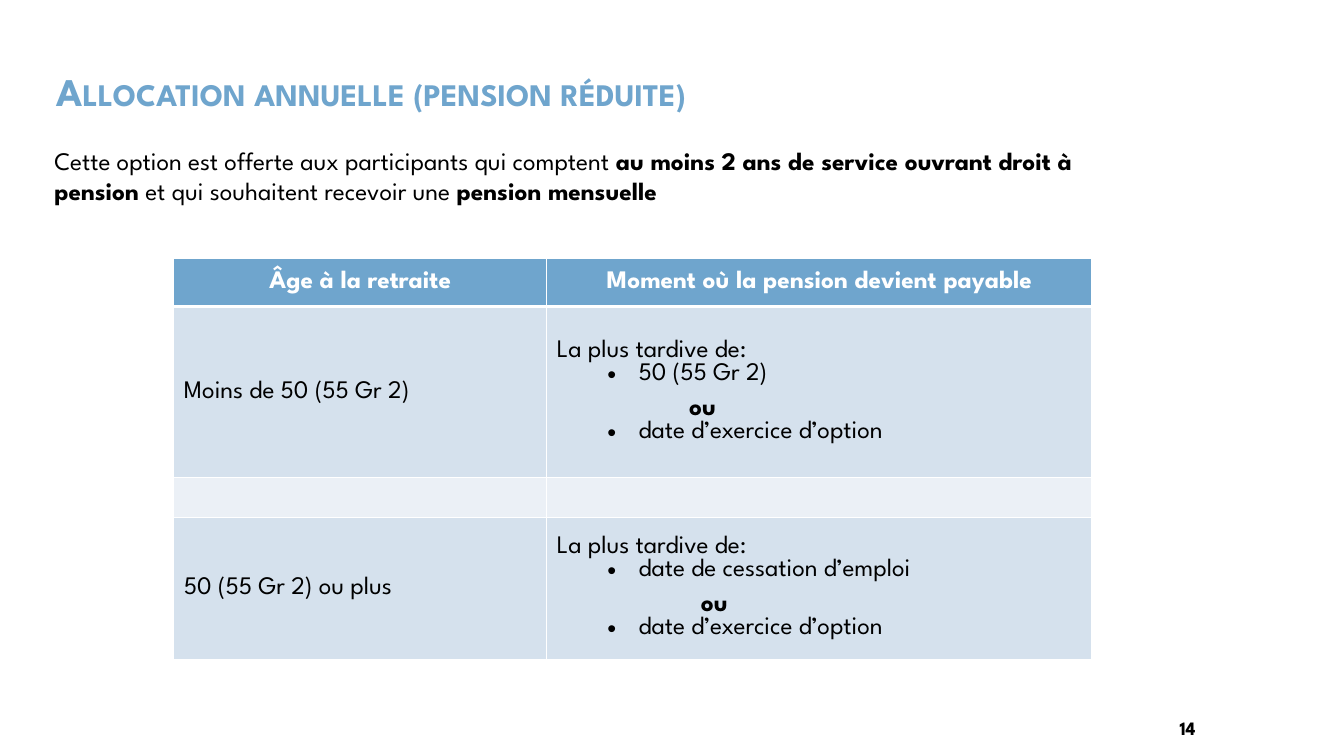
from lxml.etree import SubElement
from pptx import Presentation
from pptx.dml.color import RGBColor
from pptx.enum.text import MSO_ANCHOR, PP_ALIGN
from pptx.oxml.ns import qn
from pptx.util import Cm, Pt

BLUE = RGBColor(0x6F, 0xA5, 0xCD)
PALE_BLUE = RGBColor(0xD5, 0xE1, 0xED)
PALEST_BLUE = RGBColor(0xEB, 0xF0, 0xF6)
WHITE = RGBColor(0xFF, 0xFF, 0xFF)
BLACK = RGBColor(0, 0, 0)

COLUMN_WIDTHS = (9.4, 13.74)
ROW_HEIGHTS = (1.22, 4.32, 0.99, 3.58)
BULLET_INDENT = (2.06, -0.79)


class SlideBuilder:
    font_name = "League Spartan"

    def __init__(self, slide):
        self.slide = slide

    def style(self, paragraph, size=18, color=BLACK, bold=None):
        paragraph.font.name = self.font_name
        paragraph.font.size = Pt(size)
        paragraph.font.color.rgb = color
        paragraph.font.bold = bold

    def text(self, left, top, width, height, runs,
             align=PP_ALIGN.LEFT, **style):
        """Add a one-paragraph text box; runs are (text, bold) pairs."""
        box = self.slide.shapes.add_textbox(Cm(left), Cm(top), Cm(width), Cm(height))
        frame = box.text_frame
        frame.word_wrap = True
        paragraph = frame.paragraphs[0]
        paragraph.alignment = align
        self.style(paragraph, **style)
        for text, bold in runs:
            run = paragraph.add_run()
            run.text = text
            run.font.bold = bold
        return box

    def title(self, left, top, width, height, text):
        box = self.text(left, top, width, height, [(text, True)],
                        size=28, color=BLUE, bold=True)
        box.fill.solid()
        box.fill.fore_color.rgb = WHITE
        box.text_frame.vertical_anchor = MSO_ANCHOR.MIDDLE
        paragraph = box.text_frame.paragraphs[0]
        paragraph.line_spacing = 0.9
        paragraph.runs[0]._r.get_or_add_rPr().set("cap", "small")

    def table(self, left, top, widths, heights):
        frame = self.slide.shapes.add_table(
            len(heights), len(widths), Cm(left), Cm(top), Cm(sum(widths)), Cm(sum(heights)))
        table = frame.table
        for column, width in zip(table.columns, widths):
            column.width = Cm(width)
        for row, height in zip(table.rows, heights):
            row.height = Cm(height)
        return table

    def borders(self, cell, **widths):
        """Draw white cell borders, with widths in points by side."""
        properties = cell._tc.get_or_add_tcPr()
        for position, side in enumerate(("L", "R", "T", "B")):
            line = SubElement(properties, qn(f"a:ln{side}"), w=str(Pt(widths.get(side, 1))))
            fill = SubElement(line, qn("a:solidFill"))
            SubElement(fill, qn("a:srgbClr"), val=str(WHITE))
            properties.insert(position, line)

    def cell(self, cell, fill, **border_widths):
        cell.fill.solid()
        cell.fill.fore_color.rgb = fill
        cell.vertical_anchor = MSO_ANCHOR.MIDDLE
        cell.margin_top = cell.margin_bottom = Cm(0.05)
        self.borders(cell, **border_widths)
        self.style(cell.text_frame.paragraphs[0])

    def line(self, paragraph, text, indent=(0, 0), bullet=False, bold=False):
        """Fill a paragraph; indent is (left margin, first line) in cm."""
        paragraph.text = text
        properties = paragraph._p.get_or_add_pPr()
        properties.set("marL", str(Cm(indent[0])))
        properties.set("indent", str(Cm(indent[1])))
        if bullet:
            SubElement(properties, qn("a:buFont"), typeface="Arial")
            SubElement(properties, qn("a:buChar"), char="•")
        self.style(paragraph, bold=bold)

    def later_of(self, cell, first_date, or_indent):
        """List the two dates of which the later one counts."""
        frame = cell.text_frame
        self.line(frame.paragraphs[0], "La plus tardive de:")
        self.line(frame.add_paragraph(), first_date, BULLET_INDENT, bullet=True)
        separator = frame.add_paragraph()
        separator.line_spacing = 1.5
        self.line(separator, "ou", (or_indent, 0), bold=True)
        self.line(frame.add_paragraph(), "date d’exercice d’option", BULLET_INDENT, bullet=True)


def main():
    presentation = Presentation()
    presentation.slide_width = Cm(33.87)
    presentation.slide_height = Cm(19.05)
    builder = SlideBuilder(presentation.slides.add_slide(presentation.slide_layouts[6]))

    builder.title(1.17, 1.6, 17.55, 1.55, "Allocation annuelle (pension réduite)")

    table = builder.table(4.38, 6.5, COLUMN_WIDTHS, ROW_HEIGHTS)
    row_fills = (BLUE, PALE_BLUE, PALEST_BLUE, PALE_BLUE)
    for row_number, (row, fill) in enumerate(zip(table.rows, row_fills)):
        heavy_side = {0: {"B": 3}, 1: {"T": 3}}.get(row_number, {})
        for cell in row.cells:
            builder.cell(cell, fill, **heavy_side)

    headings = ("Âge à la retraite", "Moment où la pension devient payable")
    for cell, heading in zip(table.rows[0].cells, headings):
        paragraph = cell.text_frame.paragraphs[0]
        paragraph.text = heading
        paragraph.alignment = PP_ALIGN.CENTER
        builder.style(paragraph, color=WHITE, bold=True)

    cases = (
        (1, "Moins de 50 (55 Gr 2)", "50 (55 Gr 2)", 3.33),
        (3, "50 (55 Gr 2) ou plus", "date de cessation d’emploi", 3.63),
    )
    for row_number, age, first_date, or_indent in cases:
        builder.line(table.cell(row_number, 0).text_frame.paragraphs[0], age)
        builder.later_of(table.cell(row_number, 1), first_date, or_indent)

    builder.text(1.12, 3.53, 27.18, 1.8, [
        ("Cette option est offerte aux participants qui comptent ", False),
        ("au moins 2 ans de service ouvrant droit à pension", True),
        (" et qui souhaitent recevoir une ", False),
        ("pension mensuelle", True),
    ])
    builder.text(24.66, 17.93, 5.72, 0.76, [("14", True)],
                 align=PP_ALIGN.RIGHT, size=13.5, bold=True)
    presentation.save("out.pptx")


if __name__ == "__main__":
    main()
